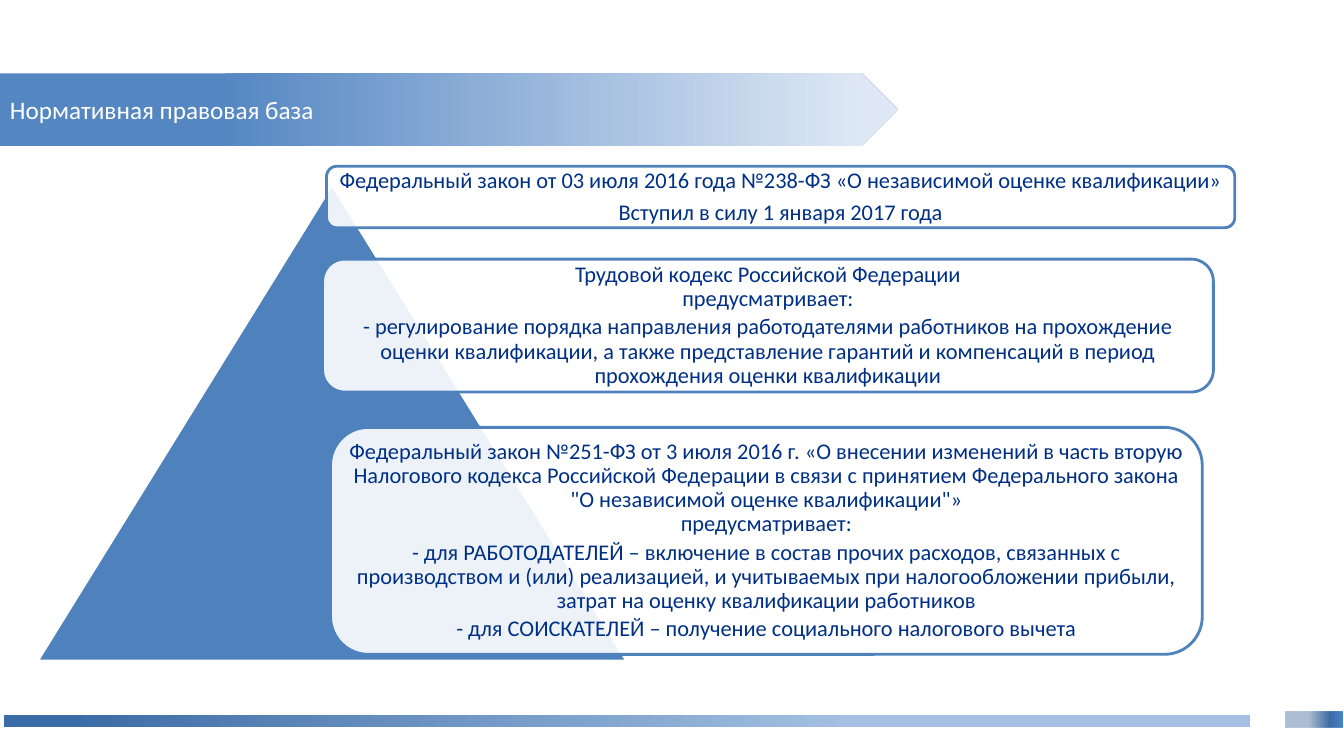
"""Build a slide on the legal basis of qualification assessment."""
from lxml.etree import SubElement
from pptx import Presentation
from pptx.dml.color import RGBColor
from pptx.enum.shapes import MSO_SHAPE
from pptx.enum.text import MSO_ANCHOR, PP_ALIGN
from pptx.oxml.ns import qn
from pptx.util import Cm, Pt

TITLE = "Нормативная правовая база"
BLUE, WHITE, NAVY = "4F81BD", "FFFFFF", "003085"
ARROW = (0, 1.85, 22.63, 1.83)
BANDS = [
    (MSO_SHAPE.RECTANGLE, (0.1, 18.03, 31.4, 0.3),
     [(5, "3C6CA6", 100), (68, "A3C0E2", 100)]),
    (MSO_SHAPE.RECTANGLE, (32.41, 17.93, 1.43, 0.41),
     [(41, "396498", 42), (78, "3C6CA6", 100), (98, "4780C5", 100)]),
    (MSO_SHAPE.PENTAGON, ARROW,
     [(24, "5486C2", 100), (96, "DEE8F5", 100)]),
]
PEAK = (0.94, 4.65, 14.86, 12.01)
LAWS = [
    ((8.23, 4.19, 22.89, 1.55), [
        ("Федеральный закон от 03 июля 2016 года №238-ФЗ «О независимой оценке квалификации»", 5.6),
        ("Вступил в силу 1 января 2017 года", 5.6),
    ]),
    ((8.13, 6.53, 22.45, 3.35), [
        ("Трудовой кодекс Российской Федерации", 0),
        ("предусматривает:", 3),
        ("- регулирование порядка направления работодателями работников на прохождение "
         "оценки квалификации, а также представление гарантий и компенсаций в период "
         "прохождения оценки квалификации", 0),
    ]),
    ((8.33, 10.77, 21.97, 5.72), [
        ("Федеральный закон №251-ФЗ от 3 июля 2016 г. «О внесении изменений в часть вторую "
         "Налогового кодекса Российской Федерации в связи с принятием Федерального закона "
         "\"О независимой оценке квалификации\"»", 0),
        ("предусматривает:", 3),
        ("- для РАБОТОДАТЕЛЕЙ – включение в состав прочих расходов, связанных с "
         "производством и (или) реализацией, и учитываемых при налогообложении прибыли, "
         "затрат на оценку квалификации работников", 3),
        ("- для СОИСКАТЕЛЕЙ – получение социального налогового вычета", 0),
    ]),
]


def color(code):
    return RGBColor.from_string(code)


def set_alpha(node, share):
    SubElement(node, qn("a:alpha"), val=str(share * 1000))


def add_shape(slide, kind, box):
    shape = slide.shapes.add_shape(kind, *map(Cm, box))
    shape.shadow.inherit = False
    return shape


def add_fill(shape, code, edge, share=100):
    shape.fill.solid()
    shape.fill.fore_color.rgb = color(code)
    if share < 100:
        set_alpha(shape.fill._xPr.find(".//" + qn("a:srgbClr")), share)
    shape.line.color.rgb = color(edge)
    shape.line.width = Pt(2)


def add_band(slide, kind, box, stops):
    band = add_shape(slide, kind, box)
    band.line.fill.background()
    band.fill.gradient()
    band.fill.gradient_angle = 0
    group = band.fill._fill._gradFill.find(qn("a:gsLst"))
    for old in list(group):
        group.remove(old)
    for place, code, share in stops:
        stop = SubElement(group, qn("a:gs"), pos=str(place * 1000))
        node = SubElement(stop, qn("a:srgbClr"), val=code)
        if share < 100:
            set_alpha(node, share)


def set_frame(frame, side, edge):
    frame.word_wrap = True
    frame.vertical_anchor = MSO_ANCHOR.MIDDLE
    frame.margin_left = frame.margin_right = Cm(side)
    frame.margin_top = frame.margin_bottom = Cm(edge)


def set_text(para, text, size, code, align):
    para.text = text
    para.alignment = align
    para.font.name = "Calibri"
    para.font.size = Pt(size)
    para.font.color.rgb = color(code)


def add_law(slide, box, lines):
    card = add_shape(slide, MSO_SHAPE.ROUNDED_RECTANGLE, box)
    add_fill(card, WHITE, BLUE, 90)
    frame = card.text_frame
    set_frame(frame, 0.17, 0.17)
    for index, (text, gap) in enumerate(lines):
        para = frame.add_paragraph() if index else frame.paragraphs[0]
        set_text(para, text, 16, NAVY, PP_ALIGN.CENTER)
        para.line_spacing = 0.9
        para.space_after = Pt(gap)


def add_title(slide):
    title = slide.shapes.title
    title.left, title.top, title.width, title.height = map(Cm, ARROW)
    set_frame(title.text_frame, 0.25, 0.13)
    set_text(title.text_frame.paragraphs[0], TITLE, 18, WHITE, PP_ALIGN.LEFT)
    slide.shapes._spTree.append(title._element)


def main():
    deck = Presentation()
    deck.slide_width, deck.slide_height = Cm(33.87), Cm(19.05)
    slide = deck.slides.add_slide(deck.slide_layouts[5])
    for kind, box, stops in BANDS:
        add_band(slide, kind, box, stops)
    add_title(slide)
    peak = add_shape(slide, MSO_SHAPE.ISOSCELES_TRIANGLE, PEAK)
    add_fill(peak, BLUE, WHITE)
    for box, lines in LAWS:
        add_law(slide, box, lines)
    deck.save("out.pptx")


if __name__ == "__main__":
    main()
